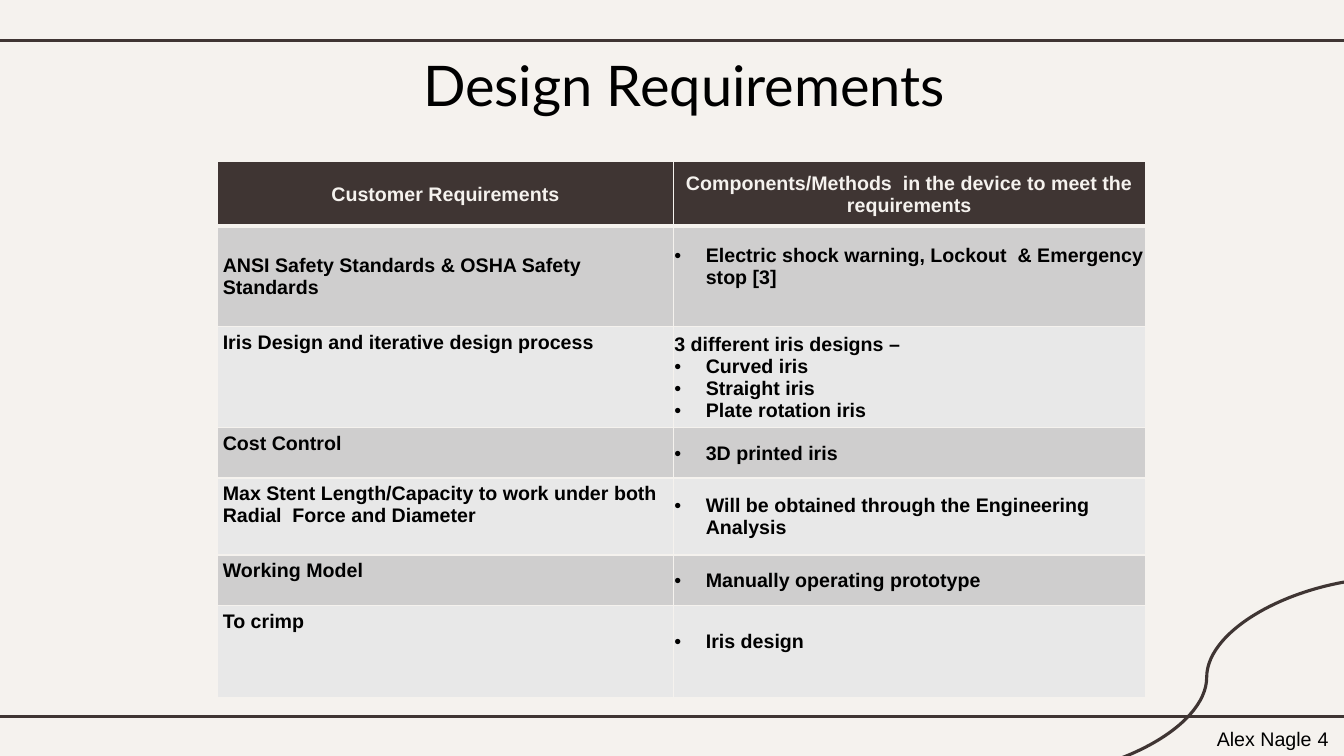
from lxml import etree
from pptx import Presentation
from pptx.dml.color import RGBColor
from pptx.enum import shapes, text
from pptx.oxml import ns
from pptx.util import Pt

CREAM = RGBColor(0xF5, 0xF2, 0xEE)
BROWN = RGBColor(0x3F, 0x35, 0x33)
BLACK = RGBColor(0, 0, 0)
BAND_DARK = RGBColor(0xCF, 0xCE, 0xCE)
BAND_LIGHT = RGBColor(0xE8, 0xE8, 0xE8)

SLIDE_WIDTH, SLIDE_HEIGHT = 960, 540
COLUMN_WIDTHS = (325.5, 337)
LINE_HEIGHT = 15
BULLET = "• "

HEADER = ("Customer Requirements",
          "Components/Methods  in the device to meet the requirements")
HEADER_HEIGHT = 46
# Row height, requirement, methods, blank lines below the methods
REQUIREMENTS = (
    (72, "ANSI Safety Standards & OSHA Safety Standards",
     ["• Electric shock warning, Lockout  & Emergency stop [3]"], 1),
    (72, "Iris Design and iterative design process",
     ["3 different iris designs –", "• Curved iris", "• Straight iris",
      "• Plate rotation iris"], 0),
    (36, "Cost Control", ["• 3D printed iris"], 0),
    (55, "Max Stent Length/Capacity to work under both Radial  Force and Diameter",
     ["• Will be obtained through the Engineering Analysis"], 0),
    (36, "Working Model", ["• Manually operating prototype"], 0),
    (66, "To crimp", ["• Iris design"], 1),
)


def set_font(para, size, color, name="Arial", bold=False):
    font = para.font
    font.name, font.size, font.bold = name, Pt(size), bold
    font.color.rgb = color


def set_margins(frame, left, top, right, bottom):
    frame.margin_left, frame.margin_top = Pt(left), Pt(top)
    frame.margin_right, frame.margin_bottom = Pt(right), Pt(bottom)


def add_bullet(para):
    props = para._p.get_or_add_pPr()
    props.set("marL", str(Pt(22.5)))
    props.set("indent", str(-Pt(22.5)))
    color = etree.SubElement(props, ns.qn("a:buClr"))
    etree.SubElement(color, ns.qn("a:srgbClr"), val=str(BLACK))
    etree.SubElement(props, ns.qn("a:buFont"), typeface="Arial")
    etree.SubElement(props, ns.qn("a:buChar"), char="•")


def set_borders(cell, top=1, bottom=1):
    props = cell._tc.get_or_add_tcPr()
    widths = {"lnL": 1, "lnR": 1, "lnT": top, "lnB": bottom}
    for position, (side, width) in enumerate(widths.items()):
        line = etree.Element(ns.qn("a:" + side), w=str(Pt(width)))
        fill = etree.SubElement(line, ns.qn("a:solidFill"))
        etree.SubElement(fill, ns.qn("a:srgbClr"), val=str(CREAM))
        props.insert(position, line)


def fill_cell(cell, lines, fill, color, anchor, margins, align=None):
    """Write lines into a cell; those that start with a bullet become list items."""
    cell.fill.solid()
    cell.fill.fore_color.rgb = fill
    cell.vertical_anchor = anchor
    set_margins(cell, *margins)
    for index, line in enumerate(lines):
        frame = cell.text_frame
        para = frame.add_paragraph() if index else frame.paragraphs[0]
        para.text = line.removeprefix(BULLET)
        if line.startswith(BULLET):
            add_bullet(para)
        para.alignment = align
        set_font(para, 14, color, bold=True)


def add_line(page, kind, *ends):
    line = page.shapes.add_connector(kind, *map(Pt, ends))
    line.line.color.rgb = BROWN
    line.line.width = Pt(2.25)
    etree.SubElement(line._element.spPr, ns.qn("a:effectLst"))


def add_decoration(page):
    straight = shapes.MSO_CONNECTOR.STRAIGHT
    for y in (29, 512):
        add_line(page, straight, -8, y, SLIDE_WIDTH + 8, y)
    add_line(page, shapes.MSO_CONNECTOR.CURVE, 996, 412.5, 728, 555)


def add_title(page, left, top, width, height):
    title = page.shapes.title
    title.left, title.top, title.width, title.height = map(Pt, (left, top, width, height))
    frame = title.text_frame
    frame.text = "Design Requirements"
    frame.auto_size = text.MSO_AUTO_SIZE.NONE
    frame.vertical_anchor = text.MSO_ANCHOR.MIDDLE
    set_margins(frame, 7.2, 7.2, 7.2, 7.2)
    para = frame.paragraphs[0]
    para.alignment = text.PP_ALIGN.LEFT
    set_font(para, 40, BLACK, "Lato")


def add_requirements_table(page, left, top):
    heights = [HEADER_HEIGHT] + [row[0] for row in REQUIREMENTS]
    frame = page.shapes.add_table(len(heights), len(COLUMN_WIDTHS), Pt(left), Pt(top),
                                  Pt(sum(COLUMN_WIDTHS)), Pt(sum(heights)))
    table = frame.table
    for column, width in zip(table.columns, COLUMN_WIDTHS):
        column.width = Pt(width)
    for row, height in zip(table.rows, heights):
        row.height = Pt(height)

    middle = text.MSO_ANCHOR.MIDDLE
    for cell, label in zip(table.rows[0].cells, HEADER):
        fill_cell(cell, [label], BROWN, CREAM, middle, (0.7, 0.7, 0.7, 0),
                  text.PP_ALIGN.CENTER)
        set_borders(cell, bottom=3)

    for index, (_, requirement, methods, blank_lines) in enumerate(REQUIREMENTS, 1):
        first = index == 1
        band = BAND_DARK if index % 2 else BAND_LIGHT
        left_cell, right_cell = table.rows[index].cells
        fill_cell(left_cell, [requirement], band, BLACK,
                  middle if first else text.MSO_ANCHOR.TOP, (3.6, 3.6, 3.6, 3.6))
        fill_cell(right_cell, methods, band, BLACK, middle,
                  (0.7, 0.7, 0.7, blank_lines * LINE_HEIGHT))
        for cell in (left_cell, right_cell):
            set_borders(cell, top=3 if first else 1)


def add_presenter(page, left, top, width, height):
    box = page.shapes.add_shape(shapes.MSO_SHAPE.RECTANGLE,
                                *map(Pt, (left, top, width, height)))
    box.shadow.inherit = False
    box.fill.solid()
    box.fill.fore_color.rgb = CREAM
    box.line.fill.background()
    frame = box.text_frame
    frame.word_wrap = True
    frame.auto_size = text.MSO_AUTO_SIZE.SHAPE_TO_FIT_TEXT
    para = frame.paragraphs[0]
    para.text = "Alex Nagle\t4"
    para.alignment = text.PP_ALIGN.RIGHT
    set_font(para, 14, BLACK)


def main():
    deck = Presentation()
    deck.slide_width, deck.slide_height = Pt(SLIDE_WIDTH), Pt(SLIDE_HEIGHT)
    page = deck.slides.add_slide(deck.slide_layouts[5])
    page.background.fill.solid()
    page.background.fill.fore_color.rgb = CREAM
    add_decoration(page)
    add_title(page, 295, 30, 459, 60.5)
    add_requirements_table(page, 155.5, 115.5)
    add_presenter(page, 853, 515.5, 103, 24.5)
    deck.save("out.pptx")


if __name__ == "__main__":
    main()
